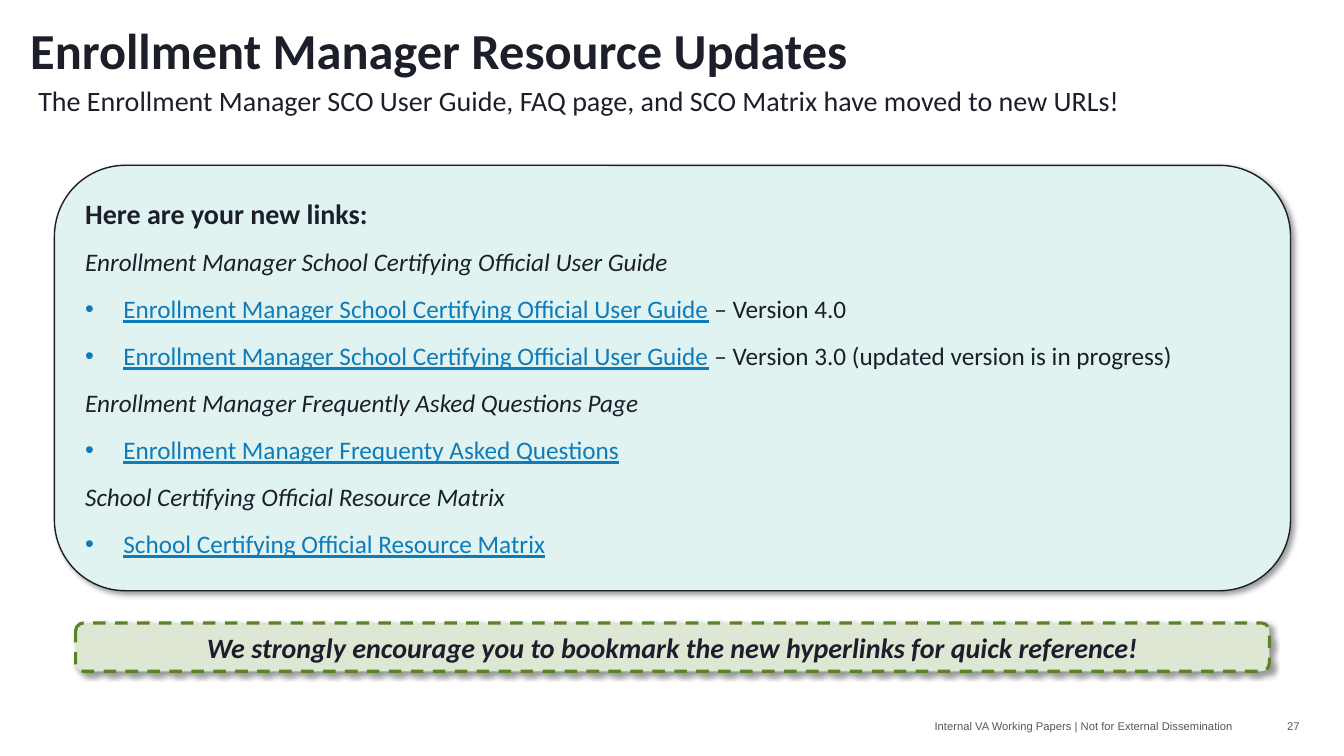
from lxml import etree
from pptx import Presentation
from pptx.dml.color import RGBColor
from pptx.enum.dml import MSO_LINE
from pptx.enum.shapes import MSO_SHAPE
from pptx.enum.text import MSO_ANCHOR, PP_ALIGN
from pptx.oxml import parse_xml
from pptx.oxml.ns import nsdecls, qn
from pptx.util import Inches, Pt

LEFT, CENTER, RIGHT = PP_ALIGN.LEFT, PP_ALIGN.CENTER, PP_ALIGN.RIGHT
TOP, MIDDLE = MSO_ANCHOR.TOP, MSO_ANCHOR.MIDDLE
ROUNDED = MSO_SHAPE.ROUNDED_RECTANGLE
DASH = MSO_LINE.DASH

WIDTH, HEIGHT = 13.33, 7.5
COLORS = {
    "text": "1C1F2A",
    "link": "0E7BBA",
    "panel": "E1F3F0",
    "callout": "DEE7D4",
    "callout_line": "598426",
    "footer": "55575F",
}
USER_GUIDE = "Enrollment Manager School Certifying Official User Guide"
MATRIX = "School Certifying Official Resource Matrix"
# Each group: heading, then (link, trailing note) pairs
LINK_GROUPS = [
    (USER_GUIDE, [
        (USER_GUIDE, " – Version 4.0"),
        (USER_GUIDE, " – Version 3.0 (updated version is in progress)"),
    ]),
    ("Enrollment Manager Frequently Asked Questions Page",
     [("Enrollment Manager Frequenty Asked Questions", "")]),
    (MATRIX, [(MATRIX, "")]),
]


def color(name):
    return RGBColor.from_string(COLORS[name])


def style(font, size, color_name="text", bold=False, italic=False, name="Calibri"):
    font.name, font.size = name, Pt(size)
    font.bold, font.italic = bold, italic
    font.color.rgb = color(color_name)


def set_frame(text_frame, inset, anchor):
    text_frame.word_wrap = True
    text_frame.vertical_anchor = anchor
    text_frame.margin_left = text_frame.margin_right = Inches(inset)
    text_frame.margin_top = text_frame.margin_bottom = Inches(inset)


def add_text(slide, box, text, size, align=LEFT, anchor=TOP, **font):
    shape = slide.shapes.add_textbox(*map(Inches, box))
    set_frame(shape.text_frame, 0, anchor)
    paragraph = shape.text_frame.paragraphs[0]
    paragraph.text = text
    paragraph.alignment = align
    style(paragraph.runs[0].font, size, **font)
    return paragraph


def add_panel(slide, box, fill, line, line_width):
    """Rounded rectangle with a soft shadow to the lower right."""
    shape = slide.shapes.add_shape(ROUNDED, *map(Inches, box))
    shape.fill.solid()
    shape.fill.fore_color.rgb = color(fill)
    shape.line.color.rgb = color(line)
    shape.line.width = Pt(line_width)
    shape.shadow.inherit = False
    effects = shape.element.spPr.find(qn("a:effectLst"))
    effects.append(parse_xml(
        f'<a:outerShdw {nsdecls("a")} blurRad="{Pt(4)}" dist="{Pt(3)}" '
        'dir="2700000" algn="tl" rotWithShape="0"><a:srgbClr val="000000">'
        '<a:alpha val="40000"/></a:srgbClr></a:outerShdw>'))
    return shape


def add_bullet(paragraph):
    properties = paragraph._p.get_or_add_pPr()
    properties.set("marL", str(Inches(0.38)))
    properties.set("indent", str(-Inches(0.38)))
    bullet_color = etree.SubElement(properties, qn("a:buClr"))
    etree.SubElement(bullet_color, qn("a:srgbClr"), val=COLORS["link"])
    etree.SubElement(properties, qn("a:buFont"), typeface="Arial")
    etree.SubElement(properties, qn("a:buChar"), char="•")


def add_header(slide, box):
    left, top, width, height = box
    title = add_text(slide, (left, top, width, 0.53),
                     "Enrollment Manager Resource Updates", 36, bold=True)
    title.line_spacing = 0.8
    add_text(slide, (left + 0.08, top + 0.52, width - 0.08, height - 0.52),
             "The Enrollment Manager SCO User Guide, FAQ page, and SCO Matrix "
             "have moved to new URLs!", 20)


def add_links(slide, box):
    text_frame = add_panel(slide, box, "panel", "text", 1).text_frame
    set_frame(text_frame, 0.1, TOP)

    def add_line(paragraph, text, size=18, **font):
        paragraph.text = text
        paragraph.alignment = LEFT
        paragraph.space_after = Pt(12)
        style(paragraph.runs[0].font, size, **font)

    add_line(text_frame.paragraphs[0], "Here are your new links:", 20, bold=True)
    for heading, links in LINK_GROUPS:
        add_line(text_frame.add_paragraph(), heading, italic=True)
        for link, note in links:
            paragraph = text_frame.add_paragraph()
            add_line(paragraph, link, color_name="link")
            paragraph.runs[0].font.underline = True
            add_bullet(paragraph)
            if note:
                run = paragraph.add_run()
                run.text = note
                style(run.font, 18)


def add_callout(slide, box):
    shape = add_panel(slide, box, "callout", "callout_line", 2.25)
    shape.line.dash_style = DASH
    set_frame(shape.text_frame, 0.05, MIDDLE)
    paragraph = shape.text_frame.paragraphs[0]
    paragraph.text = ("We strongly encourage you to bookmark the new hyperlinks "
                      "for quick reference!")
    paragraph.alignment = CENTER
    style(paragraph.runs[0].font, 20, bold=True, italic=True)


def add_footer(slide, box):
    left, top, width, height = box
    number_width = 0.42
    parts = [
        (left, width - number_width - 0.24,
         "Internal VA Working Papers | Not for External Dissemination"),
        (left + width - number_width, number_width, "27"),
    ]
    for part_left, part_width, text in parts:
        add_text(slide, (part_left, top, part_width, height), text, 8,
                 RIGHT, MIDDLE, color_name="footer", name="Arial")


def main():
    presentation = Presentation()
    presentation.slide_width = Inches(WIDTH)
    presentation.slide_height = Inches(HEIGHT)
    slide = presentation.slides.add_slide(presentation.slide_layouts[6])

    # Title and subtitle
    add_header(slide, (0.3, 0.31, 11.53, 1.02))
    # Link panel and the reminder under it, sharing one centre line
    add_links(slide, (0.54, 1.64, 12.26, 4.22))
    add_callout(slide, (0.75, 6.18, 11.84, 0.48))
    # Footer and page number
    add_footer(slide, (6.43, 7.09, 6.46, 0.23))

    presentation.save("out.pptx")


if __name__ == "__main__":
    main()
